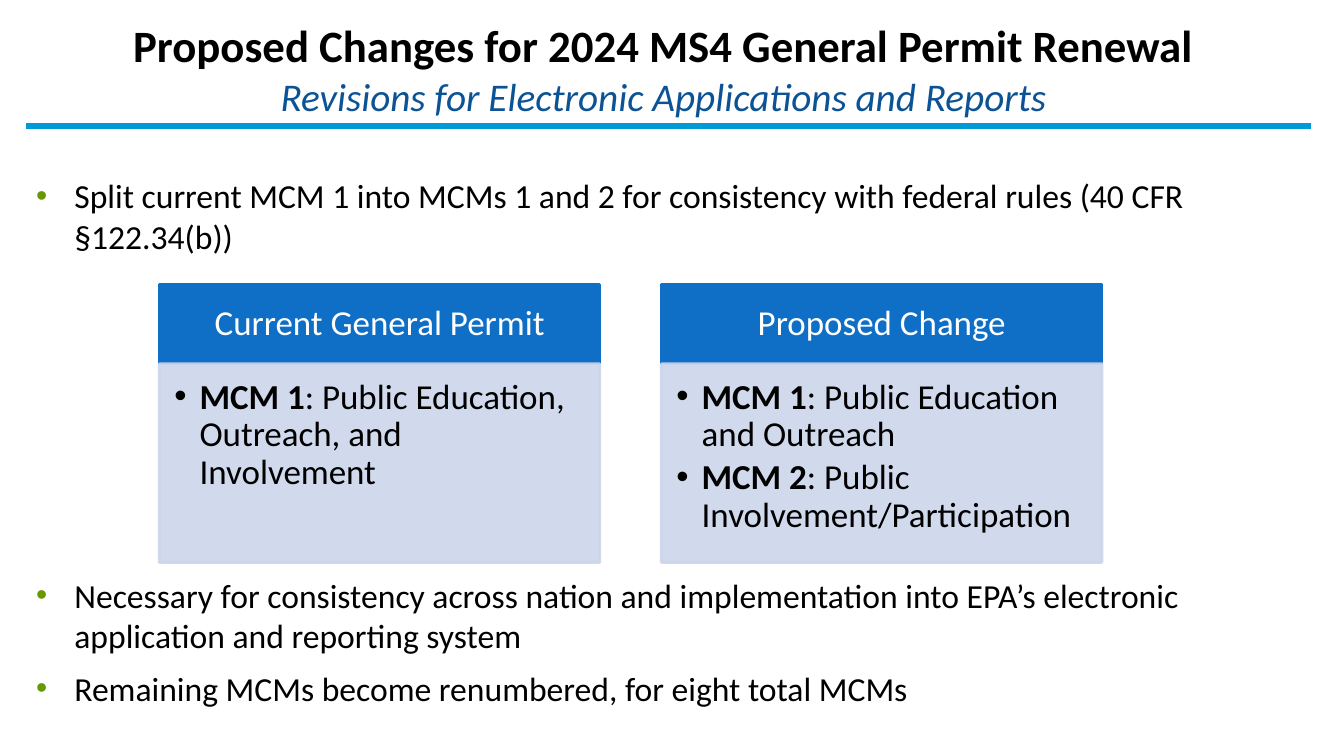
from lxml.etree import SubElement as Sub
from pptx import Presentation
from pptx.dml.color import RGBColor as Rgb
from pptx.enum.shapes import MSO_CONNECTOR as Link, MSO_SHAPE as Kind
from pptx.enum.text import MSO_ANCHOR as Anchor, PP_ALIGN as Align
from pptx.oxml.ns import qn
from pptx.util import Inches as In, Pt

theme = {
    "font": "Calibri", "black": "000000", "white": "FFFFFF",
    "sub": "0B5394", "rule": "009AD4", "dot": "669900",
    "head": "0F6FC6", "card": "CCD5EA",
    "title": 32, "second": 28, "body": 24, "label": 25,
}


def write(frame, paras, form, inset, size, color, dent=0, dot=None, first=0):
    frame.word_wrap = True
    for side, gap in zip(("left", "top", "right", "bottom"), inset):
        setattr(frame, "margin_" + side, In(gap))
    for num, runs in enumerate(paras):
        para = frame.add_paragraph() if num else frame.paragraphs[0]
        if dent:
            props = para._p.get_or_add_pPr()
            props.set("marL", str(In(dent)))
            props.set("indent", str(-In(dent)))
            if dot:
                tint = Sub(props, qn("a:buClr"))
                Sub(tint, qn("a:srgbClr"), val=dot)
                Sub(props, qn("a:buSzPct"), val="95000")
            Sub(props, qn("a:buFont"), typeface="Arial")
            Sub(props, qn("a:buChar"), char="•")
        for key, val in form.items():
            if num or key != "space_before":
                setattr(para, key, val)
        for words, look in runs:
            if words == "\n":
                para.add_line_break()
                continue
            run = para.add_run()
            run.text = words
            look = {"name": theme["font"], "size": Pt(size), "color": color, **look}
            run.font.color.rgb = Rgb.from_string(look.pop("color"))
            for key, val in look.items():
                setattr(run.font, key, val)


def panel(left, top, wide, high, color, alpha):
    shape = page.shapes.add_shape(Kind.RECTANGLE, In(left), In(top), In(wide), In(high))
    shape.shadow.inherit = False
    shape.fill.solid()
    shape.line.width = Pt(2)
    for paint in (shape.fill.fore_color, shape.line.color):
        paint.rgb = Rgb.from_string(color)
    if alpha < 100:
        for tint in list(shape.element.spPr.iter(qn("a:srgbClr"))):
            Sub(tint, qn("a:alpha"), val=str(alpha * 1000))
    return shape.text_frame


deck = Presentation()
deck.slide_width, deck.slide_height = In(13.33), In(7.5)
page = deck.slides.add_slide(deck.slide_layouts[6])
pad = (0.1, 0.05, 0.1, 0.05)

title = page.shapes.add_textbox(In(0.42), In(0.18), In(12.32), In(1)).text_frame
title.vertical_anchor = Anchor.MIDDLE
write(title, [[
    ("Proposed Changes for 2024 MS4 General Permit Renewal", {"bold": True}),
    ("\n", {}),
    ("Revisions for Electronic Applications and Reports",
     {"size": Pt(theme["second"]), "color": theme["sub"], "italic": True}),
]], {"alignment": Align.CENTER}, pad, theme["title"], theme["black"])

points = [
    (1.69, 1, ["Split current MCM 1 into MCMs 1 and 2 for consistency with federal rules (40 CFR §122.34(b))"]),
    (5.65, 1.5, ["Necessary for consistency across nation and implementation into EPA’s electronic application and reporting system",
                 "Remaining MCMs become renumbered, for eight total MCMs"]),
]
for top, high, lines in points:
    box = page.shapes.add_textbox(In(0.26), In(top), In(12), In(high)).text_frame
    write(box, [[(line, {})] for line in lines],
          {"space_before": Pt(5.8), "space_after": Pt(3)},
          pad, theme["body"], theme["black"], 0.38, theme["dot"])

cards = [
    ("Current General Permit", [("MCM 1", ": Public Education, Outreach, and Involvement")]),
    ("Proposed Change", [("MCM 1", ": Public Education and Outreach"),
                         ("MCM 2", ": Public Involvement/Participation")]),
]
left, top, wide, step, cap, high = 1.58, 2.82, 4.37, 4.98, 0.79, 1.97
for col, (name, items) in enumerate(cards):
    x = left + col * step
    head = panel(x, top, wide, cap, theme["head"], 100)
    head.vertical_anchor = Anchor.MIDDLE
    write(head, [[(name, {})]], {"alignment": Align.CENTER, "line_spacing": 0.9},
          (0.19, 0.11, 0.19, 0.11), theme["label"], theme["white"])
    body = panel(x, top + cap, wide, high, theme["card"], 90)
    body.vertical_anchor = Anchor.TOP
    write(body, [[(mark, {"bold": True}), (text, {})] for mark, text in items],
          {"alignment": Align.LEFT, "line_spacing": 0.9, "space_after": Pt(3.75)},
          (0.15, 0.15, 0.19, 0.22), theme["label"], theme["black"], 0.25)

rule = page.shapes.add_connector(Link.STRAIGHT, In(0.26), In(1.25), In(13), In(1.25))
rule.line.width = Pt(4.5)
rule.line.color.rgb = Rgb.from_string(theme["rule"])
Sub(rule.element.spPr, qn("a:effectLst"))

deck.save("out.pptx")
